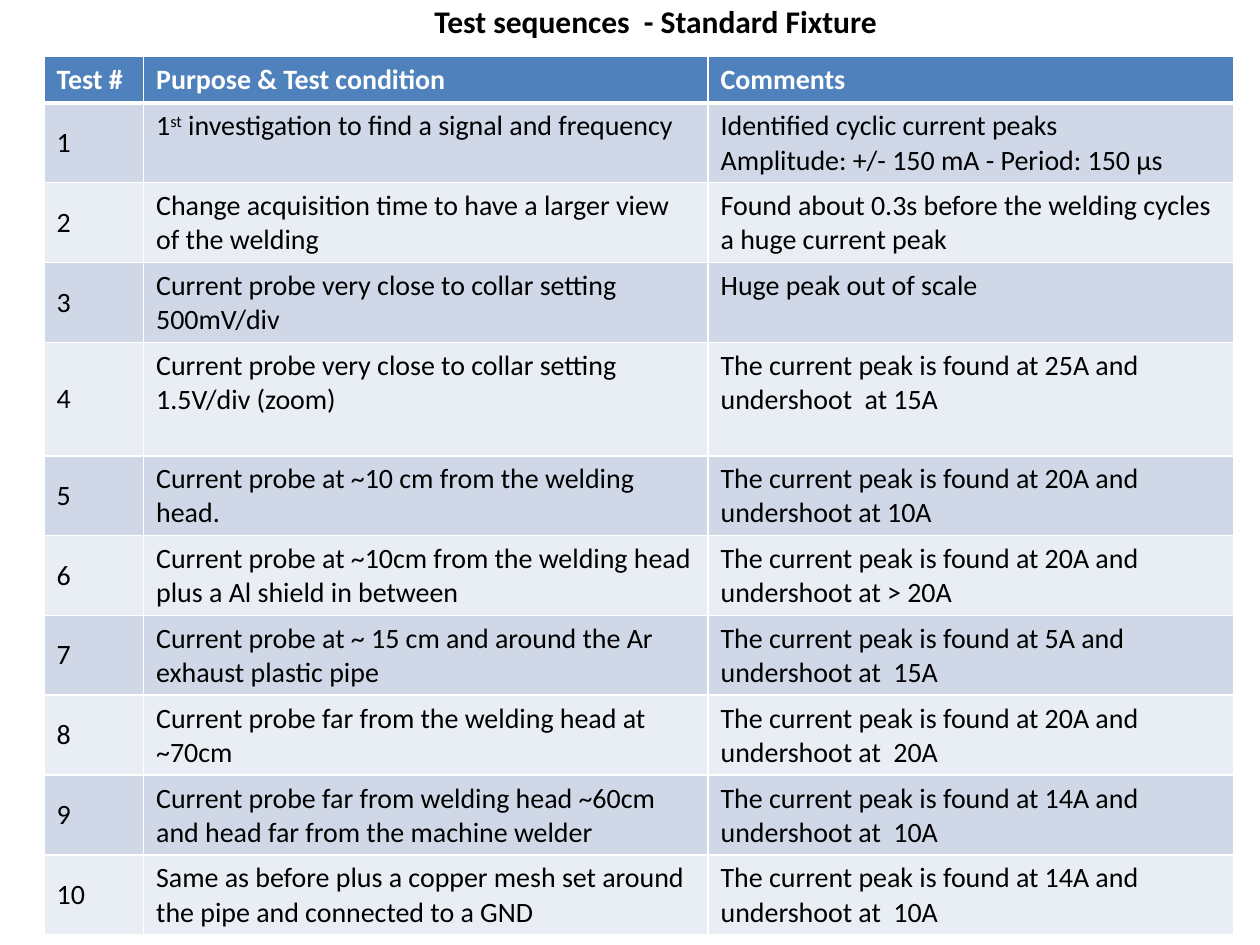
from dataclasses import dataclass

from lxml.etree import SubElement
from pptx import Presentation
from pptx.dml.color import RGBColor
from pptx.enum.text import MSO_ANCHOR, MSO_AUTO_SIZE, PP_ALIGN
from pptx.oxml.ns import qn
from pptx.util import Inches, Pt


@dataclass(frozen=True)
class Theme:
    font: str = "Calibri"
    title_size: int = 18
    table_size: int = 16
    ink: str = "000000"
    white: str = "FFFFFF"
    header: str = "4F81BD"
    bands: tuple[str, str] = ("D0D8E8", "E9EDF4")
    rule: int = 1
    header_rule: int = 3


@dataclass(frozen=True)
class Test:
    purpose: str
    comments: str
    height: float = 0.63


THEME = Theme()
HEADINGS = ("Test #", "Purpose & Test condition", "Comments")
HEADER_HEIGHT = 0.36
COLUMN_WIDTHS = (0.79, 4.48, 4.17)
SUPERSCRIPT = "^"  # encloses raised text


def peak(current: str, undershoot: str) -> str:
    return f"The current peak is found at {current} and undershoot {undershoot}"


TESTS = (
    Test("1^st^ investigation to find a signal and frequency",
         "Identified cyclic current peaks\nAmplitude: +/- 150 mA - Period: 150 µs"),
    Test("Change acquisition time to have a larger view of the welding",
         "Found about 0.3s before the welding cycles a huge current peak"),
    Test("Current probe very close to collar setting 500mV/div",
         "Huge peak out of scale"),
    Test("Current probe very close to collar setting 1.5V/div (zoom)",
         peak("25A", " at 15A"), height=0.9),
    Test("Current probe at ~10 cm from the welding head.", peak("20A", "at 10A")),
    Test("Current probe at ~10cm from the welding head plus a Al shield in between",
         peak("20A", "at > 20A")),
    Test("Current probe at ~ 15 cm and around the Ar exhaust plastic pipe",
         peak("5A", "at  15A")),
    Test("Current probe far from the welding head at ~70cm", peak("20A", "at  20A")),
    Test("Current probe far from welding head ~60cm and head far from the machine welder",
         peak("14A", "at  10A")),
    Test("Same as before plus a copper mesh set around the pipe and connected to a GND",
         peak("14A", "at  10A")),
)


def style(paragraph, size: int, color: str, bold: bool) -> None:
    font = paragraph.font
    font.name, font.size, font.bold = THEME.font, Pt(size), bold
    font.color.rgb = RGBColor.from_string(color)


def write_line(paragraph, line: str) -> None:
    """Add the line as runs, raising each part enclosed in the superscript mark."""
    for index, part in enumerate(line.split(SUPERSCRIPT)):
        run = paragraph.add_run()
        run.text = part
        if index % 2:
            run._r.get_or_add_rPr().set("baseline", "30000")


def draw_borders(cell, top: int, bottom: int) -> None:
    widths = {"lnL": THEME.rule, "lnR": THEME.rule, "lnT": top, "lnB": bottom}
    for side, width in widths.items():
        border = SubElement(cell._tc.get_or_add_tcPr(), qn(f"a:{side}"), w=str(Pt(width)))
        SubElement(SubElement(border, qn("a:solidFill")), qn("a:srgbClr"), val=THEME.white)


def fill_cell(cell, text: str, row: int, centred: bool) -> None:
    is_header = row == 0
    draw_borders(cell,
                 top=THEME.header_rule if row == 1 else THEME.rule,
                 bottom=THEME.header_rule if is_header else THEME.rule)
    cell.fill.solid()
    background = THEME.header if is_header else THEME.bands[(row - 1) % 2]
    cell.fill.fore_color.rgb = RGBColor.from_string(background)
    cell.vertical_anchor = MSO_ANCHOR.MIDDLE if centred else MSO_ANCHOR.TOP
    frame = cell.text_frame
    for index, line in enumerate(text.split("\n")):
        paragraph = frame.add_paragraph() if index else frame.paragraphs[0]
        style(paragraph, THEME.table_size, THEME.white if is_header else THEME.ink, is_header)
        write_line(paragraph, line)


def add_title(slide, text: str) -> None:
    box = slide.shapes.add_textbox(Inches(3.35), Inches(-0.03), Inches(3.74), Inches(0.4))
    frame = box.text_frame
    frame.word_wrap = False
    frame.auto_size = MSO_AUTO_SIZE.SHAPE_TO_FIT_TEXT
    title = frame.paragraphs[0]
    title.text = text
    title.alignment = PP_ALIGN.LEFT
    style(title, THEME.title_size, THEME.ink, True)


def add_test_table(slide) -> None:
    heights = (HEADER_HEIGHT, *(test.height for test in TESTS))
    rows = (HEADINGS, *((str(number), test.purpose, test.comments)
                        for number, test in enumerate(TESTS, start=1)))
    table = slide.shapes.add_table(
        len(rows), len(HEADINGS), Inches(0.35), Inches(0.45),
        Inches(sum(COLUMN_WIDTHS)), Inches(sum(heights))).table
    for column, width in zip(table.columns, COLUMN_WIDTHS):
        column.width = Inches(width)
    for row, (height, texts) in enumerate(zip(heights, rows)):
        table.rows[row].height = Inches(height)
        for column, text in enumerate(texts):
            fill_cell(table.cell(row, column), text, row, centred=row > 0 and column == 0)


def main() -> None:
    deck = Presentation()
    deck.slide_width, deck.slide_height = Inches(10), Inches(7.5)
    slide = deck.slides.add_slide(deck.slide_layouts[6])
    add_title(slide, "Test sequences  - Standard Fixture")
    add_test_table(slide)
    deck.save("out.pptx")


if __name__ == "__main__":
    main()
